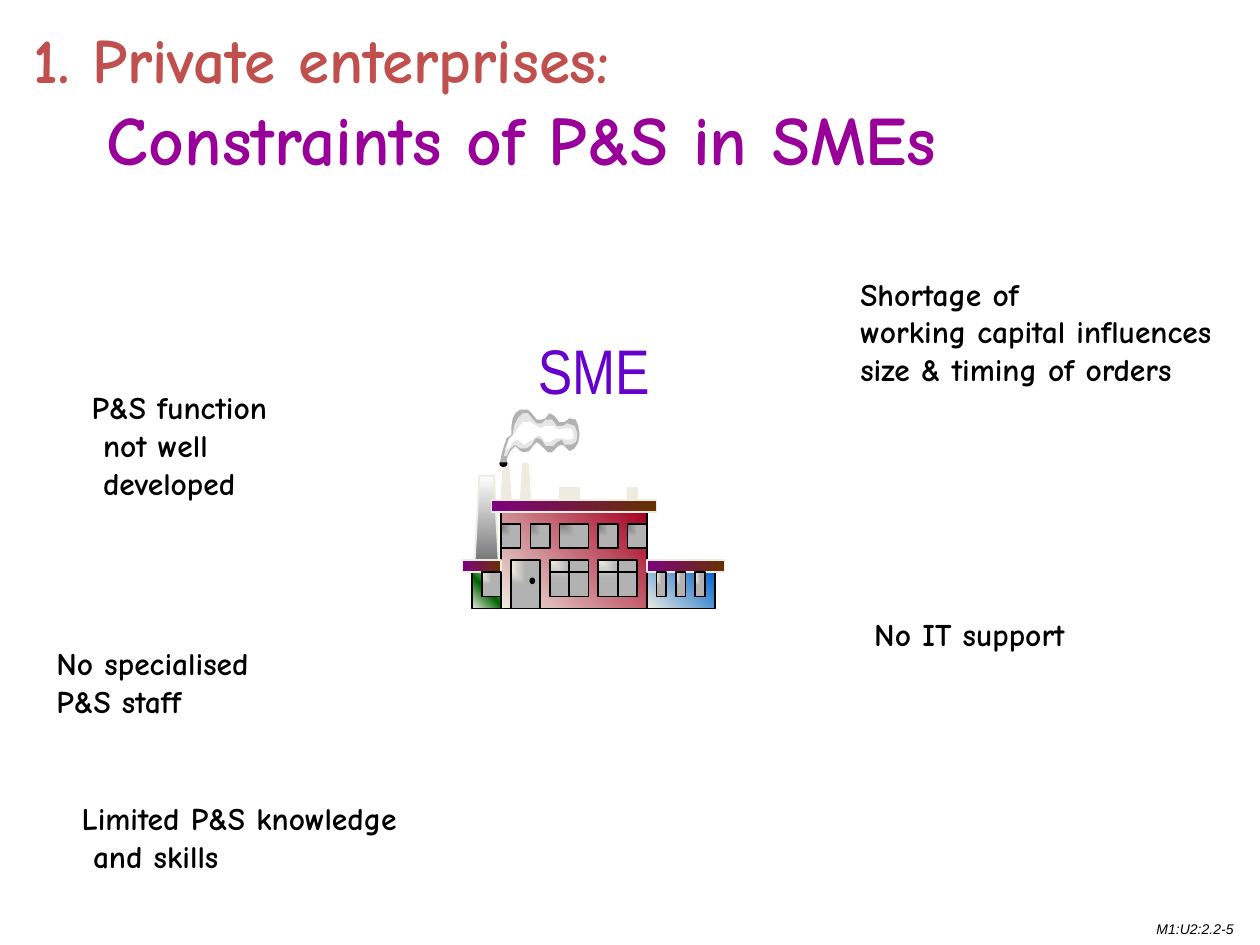
import pptx
import pptx.util
import pptx.oxml
import pptx.oxml.ns
import pptx.dml.color
import pptx.enum.shapes
import pptx.enum.text
from dataclasses import dataclass
from typing import Optional

KIND = pptx.enum.shapes.MSO_SHAPE
NS = pptx.oxml.ns.nsdecls("a")


@dataclass(frozen=True)
class Theme:
    ink: str = "000000"
    cream: str = "EEECE1"
    red: str = "C0504D"
    plum: str = "990099"
    blue: str = "6600CC"
    font: str = "Comic Neue"
    thin: str = "Arial Narrow"
    sans: str = "Arial"
    head: float = 36
    sub: float = 39.6
    body: float = 18
    foot: float = 8


@dataclass(frozen=True)
class Paint:
    stops: tuple
    angle: Optional[int] = None


@dataclass(frozen=True)
class Line:
    text: str
    size: float
    color: str
    font: str
    bold: bool = False
    slant: bool = False
    indent: float = 0


@dataclass(frozen=True)
class Note:
    box: tuple
    lines: tuple
    wrap: bool = True
    middle: bool = False


@dataclass(frozen=True)
class Block:
    box: tuple
    paint: Paint
    edge: str
    kind: int = KIND.RECTANGLE


T = Theme()
UNIT = 0.1
LEFT, TOP = 3.67, 3.68
COL, ROW = 2.08 / 27, 1.15 / 12

BLACK, CREAM = Paint((T.ink,)), Paint((T.cream,))
BRICK = Paint((T.cream, "A50021"), 315)
ROOF = Paint(("800080", "663300"), 0)
GREEN = Paint((T.cream, "006600", T.cream), 315)
WATER = Paint((T.cream, "0066CC"), 315)
STACK = Paint(("FFFFFF", "292929"), 90)
DARK = Paint(("808080", "B2B2B2"))
GLASS = Paint((T.cream, "B2B2B2"))

SMOKE = (
    ("B2B2B2", (
        (402, 367), (397, 367), (398, 361), (400, 354), (402, 348), (406, 345), (406, 338),
        (407, 332), (409, 328), (413, 325), (419, 325), (422, 328), (426, 333), (430, 333),
        (433, 332), (436, 328), (440, 330), (444, 335), (448, 335), (452, 332), (457, 333),
        (459, 338), (460, 345), (459, 351), (456, 356), (452, 358), (448, 354), (446, 353),
        (443, 354), (438, 359), (435, 359), (432, 356), (429, 353), (426, 351), (423, 354),
        (420, 358), (416, 359), (413, 358), (409, 354), (405, 358), (403, 362))),
    ("E5E5E5", (
        (402, 362), (400, 362), (401, 356), (404, 348), (407, 345), (408, 338), (411, 332),
        (415, 328), (419, 328), (423, 333), (426, 336), (430, 336), (433, 333), (438, 333),
        (442, 338), (447, 338), (450, 336), (456, 338), (458, 343), (458, 348), (457, 351),
        (453, 353), (448, 353), (446, 349), (442, 351), (439, 354), (433, 354), (430, 349),
        (428, 348), (425, 348), (422, 353), (418, 356), (413, 356), (409, 353), (405, 356))),
    ("FFFFFF", (
        (404, 356), (402, 356), (404, 349), (408, 345), (411, 340), (415, 335), (421, 335),
        (426, 338), (429, 340), (433, 338), (439, 338), (443, 341), (448, 340), (453, 340),
        (455, 343), (455, 348), (451, 349), (446, 348), (441, 348), (436, 351), (433, 351),
        (429, 346), (426, 346), (423, 349), (419, 351), (416, 353), (411, 349), (407, 351))),
)


def inch(value):
    return pptx.util.Inches(value)


def tint(code):
    return pptx.dml.color.RGBColor.from_string(code)


def place(col, row):
    return inch(LEFT + col * COL), inch(TOP + row * ROW)


def style(shape, paint: Paint, edge: Optional[str]):
    shape.shadow.inherit = False
    if len(paint.stops) == 1:
        shape.fill.solid()
        shape.fill.fore_color.rgb = tint(paint.stops[0])
    else:
        shape.fill.gradient()
        last = len(paint.stops) - 1
        stops = "".join(
            f'<a:gs pos="{100000 * i // last}"><a:srgbClr val="{code}"/></a:gs>'
            for i, code in enumerate(paint.stops))
        if paint.angle is None:
            way = '<a:path path="rect"><a:fillToRect r="100000" b="100000"/></a:path>'
        else:
            way = f'<a:lin ang="{paint.angle * 60000}" scaled="1"/>'
        props = shape._element.spPr
        props.replace(
            props.find(pptx.oxml.ns.qn("a:gradFill")),
            pptx.oxml.parse_xml(f"<a:gradFill {NS}><a:gsLst>{stops}</a:gsLst>{way}</a:gradFill>"))
    if edge:
        shape.line.color.rgb = tint(edge)
        shape.line.width = pptx.util.Pt(1)
    else:
        shape.line.fill.background()


def block(shapes, item: Block):
    col, row, wide, high = item.box
    shape = shapes.add_shape(item.kind, *place(col, row), inch(wide * COL), inch(high * ROW))
    style(shape, item.paint, item.edge)


def form(shapes, points, paint: Paint, edge: Optional[str] = None):
    pen = shapes.build_freeform(*points[0], scale=1)
    pen.add_line_segments(points[1:], close=True)
    style(pen.convert_to_shape(), paint, edge)


def rule(shapes, start, end):
    line = shapes.add_connector(pptx.enum.shapes.MSO_CONNECTOR.STRAIGHT, *place(*start), *place(*end))
    line.line.color.rgb = tint(T.ink)
    line.line.width = pptx.util.Pt(1)
    line._element.spPr.append(pptx.oxml.parse_xml(f"<a:effectLst {NS}/>"))


def note(shapes, item: Note):
    frame = shapes.add_textbox(*(inch(n * UNIT) for n in item.box)).text_frame
    frame.word_wrap = item.wrap
    if item.middle:
        frame.vertical_anchor = pptx.enum.text.MSO_ANCHOR.MIDDLE
    for i, line in enumerate(item.lines):
        para = frame.add_paragraph() if i else frame.paragraphs[0]
        if line.indent:
            para._p.get_or_add_pPr().set("marL", str(inch(line.indent * UNIT)))
        run = para.add_run()
        run.text = line.text
        run.font.size = pptx.util.Pt(line.size)
        run.font.name = line.font
        run.font.bold = line.bold
        run.font.italic = line.slant
        run.font.color.rgb = tint(line.color)


def plant(shapes):
    block(shapes, Block((4, 4, 15, 8), BRICK, T.ink))
    form(shapes, [place(*p) for p in ((1, 12), (1.75, 1), (3.25, 1), (4, 12))], STACK, T.cream)
    for col in (4, 6):
        pipe = ((col, 3), (col + 0.25, 0), (col + 0.75, 0), (col + 1, 3))
        form(shapes, [place(*p) for p in pipe], CREAM, T.cream)
    for item in (
        Block((3, 3, 17, 1), ROOF, T.cream),
        Block((17, 2, 1, 1), CREAM, T.cream),
        Block((10, 2, 2, 1), CREAM, T.cream),
        Block((1, 9, 3, 3), GREEN, T.ink),
        Block((0, 8, 4, 1), ROOF, T.cream),
        Block((19, 9, 7, 3), WATER, T.ink),
        Block((19, 8, 8, 1), ROOF, T.cream),
    ):
        block(shapes, item)
    for col, wide in ((4, 2), (7, 2), (10, 3), (14, 2), (17, 2)):
        block(shapes, Block((col, 5, wide, 2), DARK, T.ink))
    block(shapes, Block((5, 8, 3, 4), GLASS, T.ink))
    block(shapes, Block((7, 9.5, 0.4, 0.4), BLACK, T.ink, KIND.OVAL))
    for col in (9, 14):
        block(shapes, Block((col, 8, 4, 3), GLASS, T.ink))
        rule(shapes, (col + 2, 8), (col + 2, 11))
        rule(shapes, (col, 9), (col + 4, 9))
    for col, wide in ((20, 1), (22, 1), (24, 1), (2, 2)):
        block(shapes, Block((col, 9, wide, 2), GLASS, T.ink))
    block(shapes, Block((3.9, -0.2, 0.65, 0.4), BLACK, T.ink, KIND.OVAL))
    for color, points in SMOKE:
        form(shapes, [(inch(x / 100), inch(y / 100)) for x, y in points], Paint((color,)))


def fact(box, *lines, indent=0, wrap=True):
    return Note(box, tuple(
        Line(text, T.body, T.ink, T.font, bold=True, indent=indent if i else 0)
        for i, text in enumerate(lines)), wrap)


NOTES = (
    Note((1.7, 1.7, 95.8, 12.5), (
        Line("1. Private enterprises:", T.head, T.red, T.font, True),
        Line("Constraints of P&S in SMEs", T.sub, T.plum, T.font, True, indent=5.8)), middle=True),
    Note((90.8, 72.6, 8.3, 2.3), (Line("M1:U2:2.2-5", T.foot, T.ink, T.sans, slant=True),), False),
    Note((41.7, 25.8, 13, 9.9), (Line("SME", T.head, T.blue, T.thin),)),
    fact((6.3, 30.3, 30, 10.1), "P&S function", "not well", "developed", indent=0.9),
    fact((3.5, 50.6, 30, 7.1), "No specialised", "P&S staff"),
    fact((5.5, 62.9, 35, 7.1), "Limited P&S knowledge", "and skills", indent=0.9),
    fact((67.3, 21.3, 32, 10.1), "Shortage of", "working capital influences", "size & timing of orders"),
    fact((68.4, 48.3, 19.7, 4), "No IT support", wrap=False),
)


def main():
    deck = pptx.Presentation()
    deck.slide_width, deck.slide_height = inch(10), inch(7.5)
    slide = deck.slides.add_slide(deck.slide_layouts[6])
    plant(slide.shapes.add_group_shape().shapes)
    for item in NOTES:
        note(slide.shapes, item)
    deck.save("out.pptx")


if __name__ == "__main__":
    main()
